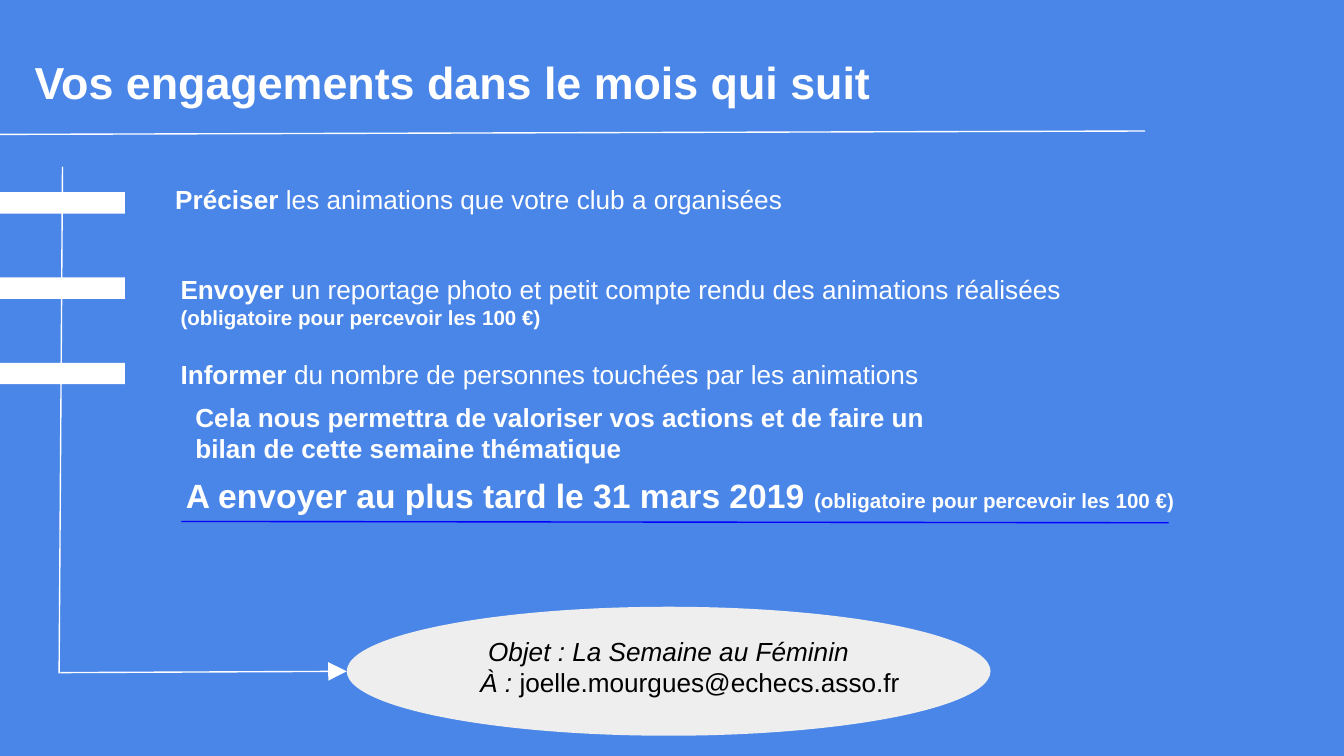
from pptx import Presentation
from pptx.dml.color import RGBColor
from pptx.enum.shapes import MSO_CONNECTOR, MSO_SHAPE
from pptx.enum.text import MSO_ANCHOR, PP_ALIGN
from pptx.oxml.ns import qn
from pptx.util import Pt
from lxml.etree import SubElement

PX = 4572  # 200 px to the inch
PAGE_WIDTH, PAGE_HEIGHT = 2000, 1125
BLUE, WHITE, GREY, BLACK, UNDERLINE = "4A86E8", "FFFFFF", "EEEEEE", "000000", "0000FF"

# A span is (text, style); a paragraph is a list of spans.
REQUIRED = ("(obligatoire pour percevoir les 100 €)", {"size": 11, "bold": True})
BOLD = {"bold": True}
ITALIC = {"italic": True}

TITLE = [("Vos engagements dans le mois qui suit", {"size": 24, "bold": True})]
COMMITMENTS = [
    ((241, 253, 1178, 96), [("Préciser", BOLD),
                            (" les animations que votre club a organisées", {})]),
    ((249, 387, 1490, 84), [("Envoyer ", BOLD),
                            ("un reportage photo et petit compte rendu des animations réalisées ", {}),
                            REQUIRED]),
    ((249, 514, 1178, 96), [("Informer", BOLD),
                            (" du nombre de personnes touchées par les animations", {})]),
]
PURPOSE = [("Cela nous permettra de valoriser vos actions et de faire un "
            "bilan de cette semaine thématique", BOLD)]
DEADLINE = [("A envoyer au plus tard le 31 mars 2019 ", {"size": 18, "bold": True}), REQUIRED]
MAIL = [
    [("Objet : La Semaine au Féminin", ITALIC)],
    [("À : ", ITALIC), ("joelle.mourgues@echecs.asso.fr", {})],
]
MAIL_INDENT = 64
TEXT_INSET = 20

BAR_TOP, BAR_STEP, BAR_WIDTH, BAR_HEIGHT = 286, 127, 186, 32

deck = Presentation()
deck.slide_width, deck.slide_height = PAGE_WIDTH * PX, PAGE_HEIGHT * PX
page = deck.slides.add_slide(deck.slide_layouts[6])


def rgb(value):
    return RGBColor.from_string(value)


def add_text(paragraphs, place, color=WHITE, align=PP_ALIGN.LEFT):
    box = page.shapes.add_textbox(*(n * PX for n in place))
    frame = box.text_frame
    frame.word_wrap = True
    frame.vertical_anchor = MSO_ANCHOR.TOP
    frame.margin_left = frame.margin_right = TEXT_INSET * PX
    frame.margin_top = frame.margin_bottom = TEXT_INSET * PX
    for index, spans in enumerate(paragraphs):
        para = frame.add_paragraph() if index else frame.paragraphs[0]
        para.alignment = align
        for text, style in spans:
            span = para.add_run()
            span.text = text
            font = span.font
            font.name = "Arial"
            font.size = Pt(style.get("size", 14))
            font.bold = style.get("bold", False)
            font.italic = style.get("italic", False)
            font.color.rgb = rgb(color)
    return box


def add_filled(kind, place, color):
    shape = page.shapes.add_shape(kind, *(n * PX for n in place))
    shape.shadow.inherit = False
    shape.fill.solid()
    shape.fill.fore_color.rgb = rgb(color)
    shape.line.fill.background()


def add_line(start, end, color=WHITE, arrow=False):
    connector = page.shapes.add_connector(MSO_CONNECTOR.STRAIGHT,
                                          *(n * PX for n in start + end))
    connector.line.color.rgb = rgb(color)
    connector.line.width = Pt(0.75)
    properties = connector._element.spPr
    if arrow:
        SubElement(properties.find(qn("a:ln")), qn("a:tailEnd"),
                   type="triangle", w="lg", len="lg")
    SubElement(properties, qn("a:effectLst"))


page.background.fill.solid()
page.background.fill.fore_color.rgb = rgb(BLUE)

add_text([TITLE], (32, 62, 1884, 122))
add_line((0, 200), (1704, 195))

for index, (place, spans) in enumerate(COMMITMENTS):
    bar_top = BAR_TOP + index * BAR_STEP
    add_filled(MSO_SHAPE.RECTANGLE, (0, bar_top, BAR_WIDTH, BAR_HEIGHT), WHITE)
    add_text([spans], place)

add_text([PURPOSE], (271, 577, 1178, 122))
add_text([DEADLINE], (257, 687, 1800, 96))
add_line((270, 776), (1739, 778), UNDERLINE)

add_line((93, 248), (88, 1002))
add_line((90, 1001), (516, 999), arrow=True)
add_filled(MSO_SHAPE.OVAL, (516, 903, 958, 192), GREY)
mail_box = add_text(MAIL, (417, 925, 1156, 122), BLACK, PP_ALIGN.CENTER)
recipient = mail_box.text_frame.paragraphs[1]
recipient._p.get_or_add_pPr().set("marL", str(MAIL_INDENT * PX))

deck.save("out.pptx")
